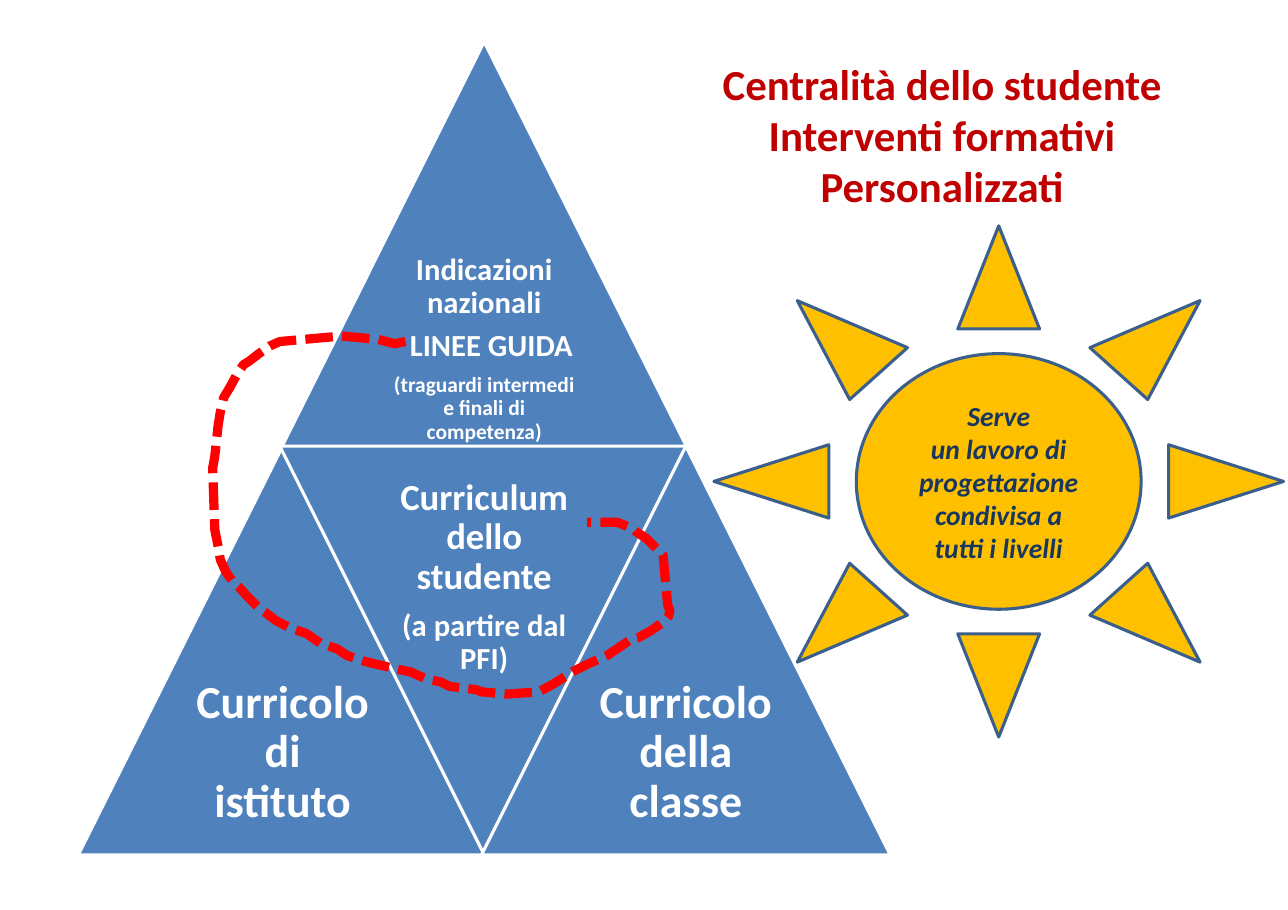
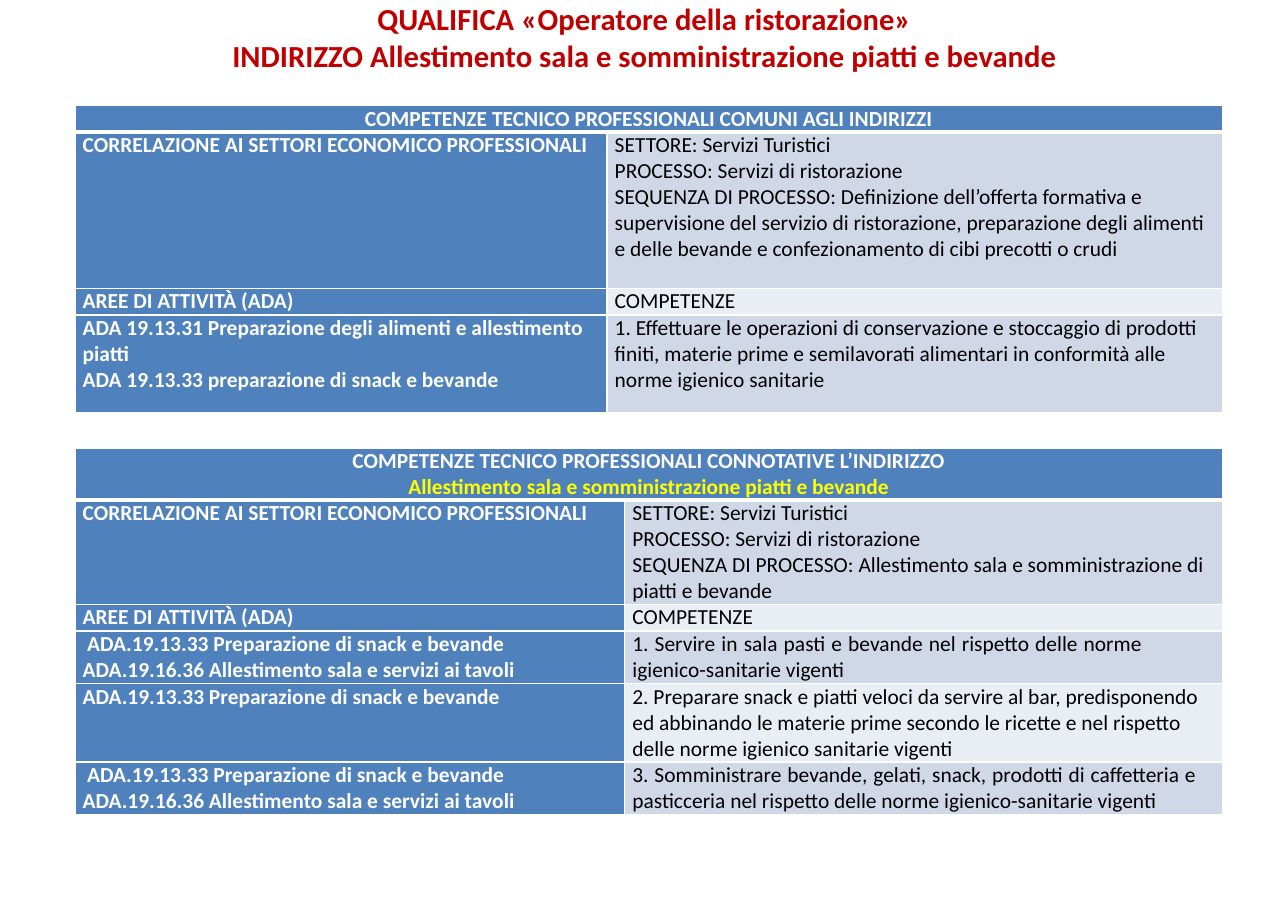
from lxml import etree
from pptx import Presentation
from pptx.dml.color import RGBColor
from pptx.enum.dml import MSO_LINE
from pptx.enum.shapes import MSO_SHAPE
from pptx.enum.text import MSO_ANCHOR, PP_ALIGN
from pptx.oxml.ns import qn
from pptx.util import Pt

PX = 9144  # EMU in one px, 100 px to the inch
LEFT, MID, JUST = PP_ALIGN.LEFT, PP_ALIGN.CENTER, PP_ALIGN.JUSTIFY
TOP, CENTRE = MSO_ANCHOR.TOP, MSO_ANCHOR.MIDDLE
TRI, SUN = MSO_SHAPE.ISOSCELES_TRIANGLE, MSO_SHAPE.SUN
DASH = MSO_LINE.SQUARE_DOT

BLUE, WHITE, BLACK = "4F81BD", "FFFFFF", "000000"
RED, NAVY, GOLD = "C00000", "17375E", "FFC000"
BANDS = "D0D8E8", "E9EDF4"

BASE = dict(name="Calibri", size=14, bold=True, italic=False, hue=WHITE,
            align=MID, pitch=None, gap=0, indent=0)
SIDE = 371  # width and height of each triangle
HALF = 183  # step from a triangle to the next half column

TRAIL = [
    (368, 310), (358, 312), (343, 308), (310, 305), (254, 310), (245, 314),
    (235, 321), (226, 328), (221, 331), (215, 340), (209, 351), (203, 361),
    (200, 374), (198, 386), (195, 414), (193, 425), (195, 481), (198, 496),
    (200, 508), (205, 519), (212, 529), (217, 533), (226, 543), (235, 552),
    (241, 556), (250, 563), (263, 570), (278, 575), (291, 584), (306, 589),
    (315, 595), (330, 600), (342, 603), (359, 607), (373, 610), (386, 616),
    (400, 619), (408, 623), (432, 626), (437, 628), (460, 630), (489, 628),
    (502, 621), (521, 609), (533, 603), (551, 595), (563, 587), (573, 580),
    (579, 579), (590, 573), (603, 564), (607, 559), (608, 554), (606, 549),
    (603, 517), (602, 504), (594, 496), (587, 489), (578, 483), (575, 480),
    (560, 474), (533, 474)]

SECTOR = "CORRELAZIONE AI SETTORI ECONOMICO PROFESSIONALI"
AREAS = ["AREE DI ATTIVITÀ (ADA)"], ["COMPETENZE"]
HALL = [("ADA.19.13.33 Preparazione di snack e bevande", dict(indent=4)),
        "ADA.19.16.36 Allestimento sala e servizi ai tavoli"]
SHARED = [
    ([SECTOR],
     ["SETTORE: Servizi Turistici", "PROCESSO: Servizi di ristorazione",
      "SEQUENZA DI PROCESSO: Definizione dell’offerta formativa e "
      "supervisione del servizio di ristorazione, preparazione degli alimenti "
      "e delle bevande e confezionamento di cibi precotti o crudi"]),
    AREAS,
    (["ADA 19.13.31 Preparazione degli alimenti e allestimento piatti",
      "ADA 19.13.33 preparazione di snack e bevande"],
     ["1. Effettuare le operazioni di conservazione e stoccaggio di prodotti "
      "finiti, materie prime e semilavorati alimentari in conformità alle "
      "norme igienico sanitarie"])]
TRACK = [
    ([SECTOR],
     ["SETTORE: Servizi Turistici", "PROCESSO: Servizi di ristorazione",
      "SEQUENZA DI PROCESSO: Allestimento sala e somministrazione di piatti "
      "e bevande"]),
    AREAS,
    (HALL,
     [("1. Servire in sala pasti e bevande nel rispetto delle norme "
       "igienico-sanitarie vigenti", dict(align=JUST))], 73),
    (["ADA.19.13.33 Preparazione di snack e bevande"],
     ["2. Preparare snack e piatti veloci da servire al bar, predisponendo ed "
      "abbinando le materie prime secondo le ricette e nel rispetto delle "
      "norme igienico sanitarie vigenti"]),
    (HALL,
     [("3. Somministrare bevande, gelati, snack, prodotti di caffetteria e "
       "pasticceria nel rispetto delle norme igienico-sanitarie vigenti",
       dict(align=JUST))], 24)]


def rgb(hue):
    return RGBColor.from_string(hue)


def box(*sizes):
    return [size * PX for size in sizes]


def pad(frame, left, top, right, bottom):
    """Set the insets of a text frame or a table cell."""
    sides = dict(left=left, top=top, right=right, bottom=bottom)
    for side, size in sides.items():
        setattr(frame, "margin_" + side, size * PX)


def write(frame, lines, **look):
    """Fill a frame; a line is a string or a pair of string and own format."""
    for num, line in enumerate(lines):
        text, own = line if isinstance(line, tuple) else (line, {})
        form = BASE | look | own
        para = frame.add_paragraph() if num else frame.paragraphs[0]
        para.alignment = form["align"]
        para.line_spacing = form["pitch"]
        para.space_after = Pt(form["gap"] * form["size"])
        if form["indent"]:
            para._p.get_or_add_pPr().set("marL", str(form["indent"] * PX))
        run = para.add_run()
        run.text = text
        for key in ("name", "bold", "italic"):
            setattr(run.font, key, form[key])
        run.font.size = Pt(form["size"])
        run.font.color.rgb = rgb(form["hue"])


def label(slide, area, lines, inset=(10, 5, 10, 5), anchor=TOP, **look):
    frame = slide.shapes.add_textbox(*box(*area)).text_frame
    frame.word_wrap = True
    frame.vertical_anchor = anchor
    pad(frame, *inset)
    write(frame, lines, **look)


def solid(slide, kind, area, fill, edge):
    shape = slide.shapes.add_shape(kind, *box(*area))
    shape.shadow.inherit = False
    shape.fill.solid()
    shape.fill.fore_color.rgb = rgb(fill)
    shape.line.color.rgb = rgb(edge)
    shape.line.width = Pt(2)
    return shape


def wedge(slide, left, top, lines, size, inset, turn=0, drop=186, tall=185):
    """Draw one triangle of the pyramid, with its text drop px below its top."""
    shape = solid(slide, TRI, (left, top, SIDE, SIDE), BLUE, WHITE)
    shape.rotation = turn
    label(slide, (left + 93, top + drop, 185, tall), lines, [inset] * 4,
          CENTRE, size=size, pitch=0.9, gap=0.35)


def trail(slide):
    pen = slide.shapes.build_freeform(*TRAIL[0], scale=PX)
    pen.add_line_segments(TRAIL[1:], close=False)
    shape = pen.convert_to_shape()
    shape.shadow.inherit = False
    shape.fill.background()
    shape.line.color.rgb = rgb("FF0000")
    shape.line.width = Pt(6)
    shape.line.dash_style = DASH


def edges(cell, top, base):
    """Give a cell white borders; top and base are widths in points."""
    props = cell._tc.get_or_add_tcPr()
    sides = dict(lnL=1, lnR=1, lnT=top, lnB=base)
    for num, (side, width) in enumerate(sides.items()):
        line = etree.Element(qn("a:" + side), w=str(Pt(width)))
        fill = etree.SubElement(line, qn("a:solidFill"))
        etree.SubElement(fill, qn("a:srgbClr"), val=WHITE)
        props.insert(num, line)


def paint(cell, fill, top=1, base=1, right=7):
    pad(cell, 7, 0, right, 0)
    cell.fill.solid()
    cell.fill.fore_color.rgb = rgb(fill)
    edges(cell, top, base)


def grid(slide, top, cols, highs, head, rows):
    """Add a table with a merged head row and banded answers."""
    area = box(68, top, sum(cols), sum(highs))
    table = slide.shapes.add_table(len(highs), len(cols), *area).table
    table.first_row = table.horz_banding = False
    for col, wide in zip(table.columns, cols):
        col.width = wide * PX
    for row, high in zip(table.rows, highs):
        row.height = high * PX
    for cell in table.rows[0].cells:
        paint(cell, BLUE, base=3)
    table.cell(0, 0).merge(table.cell(0, 1))
    write(table.cell(0, 0).text_frame, head)
    for num, (area, skill, *right) in enumerate(rows):
        cells = table.rows[num + 1].cells
        rim = 1 if num else 3
        paint(cells[0], BLUE, rim)
        write(cells[0].text_frame, area, align=LEFT)
        paint(cells[1], BANDS[num % 2], rim, 1, *right)
        write(cells[1].text_frame, skill,
              align=LEFT, bold=False, hue=BLACK)


def heading(slide, area, lines, size, **form):
    label(slide, area, lines, size=size, hue=RED, **form)


def levels(slide):
    low = 405
    left, mid, right = (71 + HALF * num for num in range(3))
    wedge(slide, mid, 38,
          ["Indicazioni nazionali", ("LINEE GUIDA", dict(indent=13)),
           ("(traguardi intermedi e finali di competenza)", dict(size=14))],
          20, 8)
    wedge(slide, left, low, ["Curricolo di istituto"], 30, 12)
    wedge(slide, mid, low,
          ["Curriculum dello studente",
           ("(a partire dal PFI)", dict(size=20))],
          24, 10, turn=180, drop=19, tall=200)
    wedge(slide, right, low, ["Curricolo della classe"], 30, 12)
    trail(slide)
    heading(slide, (608, 47, 494, 212),
            ["Centralità dello studente", "Interventi formativi",
             "Personalizzati"], 28)
    sun = solid(slide, SUN, (648, 205, 517, 464), GOLD, "3A5F8C")
    sun.text_frame.vertical_anchor = CENTRE
    write(sun.text_frame,
          ["Serve", "un lavoro di progettazione condivisa a tutti i livelli"],
          size=18, hue=NAVY, italic=True)


def skills(slide):
    role = "Allestimento sala e somministrazione piatti e bevande"
    heading(slide, (85, 0, 1000, 96),
            ["QUALIFICA «Operatore della ristorazione»",
             "INDIRIZZO " + role], 20, inset=[0] * 4)
    grid(slide, 96, (483, 559), (24, 142, 24, 89),
         ["COMPETENZE TECNICO PROFESSIONALI COMUNI AGLI INDIRIZZI"], SHARED)
    grid(slide, 407, (499, 543), (46, 95, 24, 48, 71, 48),
         ["COMPETENZE TECNICO PROFESSIONALI CONNOTATIVE L’INDIRIZZO",
          (role, dict(hue="FFFF00"))], TRACK)


def main():
    deck = Presentation()
    deck.slide_width, deck.slide_height = box(1169, 826)
    for build in (levels, skills):
        build(deck.slides.add_slide(deck.slide_layouts[6]))
    deck.save("out.pptx")


if __name__ == "__main__":
    main()
